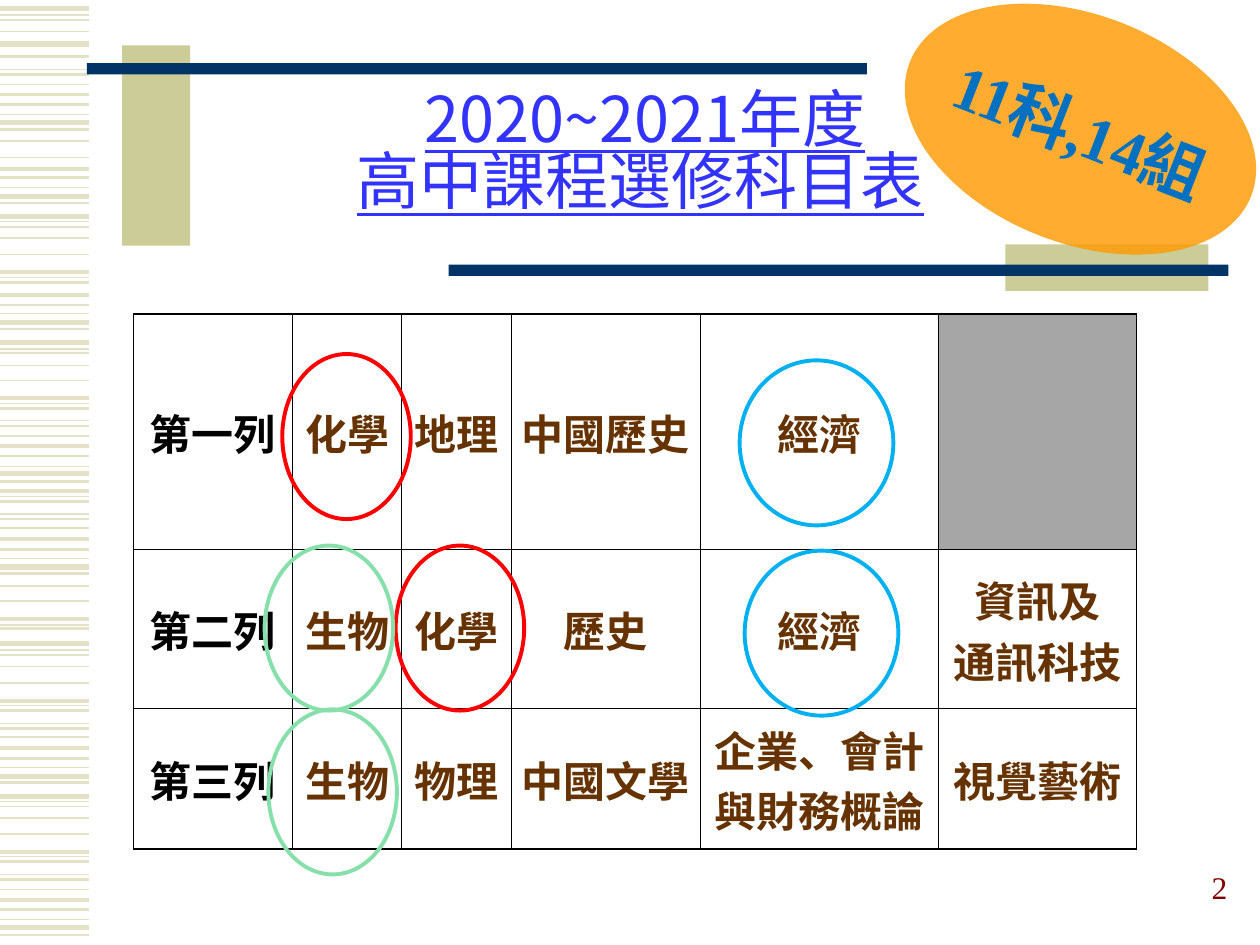
from lxml import etree
from pptx import Presentation
from pptx import util as u
from pptx.dml.color import RGBColor
from pptx.enum import shapes, text
from pptx.oxml.ns import qn

PX = 9144  # 100 px to the inch
CJK, SERIF = "Noto Sans CJK TC", "Times New Roman"
NAVY, TAN, BROWN, BLACK = "003366", "CCCC99", "663300", "000000"
RED, GREEN, BLUE = "FF0000", "87DFAB", "00B0F0"

# Line width in points -> heights of the stripes in the left margin
STRIPES = {
    0.75: [12, 55, 91, 149, 176, 220, 249, 277, 320, 334, 370, 394, 408, 443, 496,
           516, 560, 574, 609, 636, 680, 694, 730],
    1: [16, 25, 67, 112, 125, 180, 189, 202, 280, 290, 302, 346, 419, 465, 477,
        520, 529, 542, 585, 640, 649, 662, 706],
    1.5: [45, 59, 83, 103, 141, 161, 224, 242, 261, 324, 338, 362, 382, 398, 412,
          436, 455, 499, 564, 578, 602, 621, 684, 698, 722, 742],
    2.25: [75, 134, 216, 234, 316, 354, 390, 428, 491, 556, 594, 676, 714],
    3: [7, 35, 97, 156, 172, 256, 272, 376, 450, 511, 616, 632, 736],
}
COLS, ROWS = [126, 87, 87, 150, 189, 157], [187, 126, 112]
SUBJECTS = [
    ["第一列", "化學", "地理", "中國歷史", "經濟", ""],
    ["第二列", "生物", "化學", "歷史", "經濟", "資訊及\v通訊科技"],
    ["第三列", "生物", "物理", "中國文學", "企業、會計\v與財務概論", "視覺藝術"],
]
# Rings round the repeated subjects: left, top, width, colour
RINGS = [(224, 281, 102, RED), (314, 433, 102, RED), (210, 433, 102, GREEN),
         (213, 563, 102, GREEN), (591, 437, 122, BLUE), (587, 286, 122, BLUE)]


def px(*values):
    return [u.Emu(v * PX) for v in values]


def rgb(hex_color):
    return RGBColor.from_string(hex_color)


def style(font, size, color, name=CJK, bold=False):
    font.size, font.name, font.bold = u.Pt(size), name, bold
    font.color.rgb = rgb(color)
    etree.SubElement(font._element, qn("a:ea"), typeface=CJK)


def add_shape(s, kind, box, fill=None, line=None):
    sp = s.shapes.add_shape(kind, *px(*box))
    sp.shadow.inherit = False
    if fill:
        sp.fill.solid()
        sp.fill.fore_color.rgb = rgb(fill)
    else:
        sp.fill.background()
    if line:
        sp.line.color.rgb, sp.line.width = rgb(line), u.Pt(2.25)
    else:
        sp.line.fill.background()
    return sp


def add_stripes(s, x, y, w):
    for weight, heights in STRIPES.items():
        for h in heights:
            c = s.shapes.add_connector(shapes.MSO_CONNECTOR.STRAIGHT,
                                       *px(x, y + h, x + w, y + h))
            c.line.color.rgb, c.line.width = rgb("E3E2C7"), u.Pt(weight)
            etree.SubElement(c._element.spPr, qn("a:effectLst"))


def add_bars(s, x, y):
    for dx, dy, w, h, fill in [(28, 0, 54, 159, TAN), (0, 14, 619, 9, NAVY),
                               (729, 158, 161, 37, TAN), (287, 174, 619, 9, NAVY)]:
        add_shape(s, shapes.MSO_SHAPE.RECTANGLE, (x + dx, y + dy, w, h), fill)


def add_title(s, box):
    sp = s.shapes.title
    sp.left, sp.top, sp.width, sp.height = px(*box)
    tf = sp.text_frame
    tf.text = "2020~2021年度\n高中課程選修科目表"
    tf.word_wrap, tf.auto_size = True, text.MSO_AUTO_SIZE.NONE
    tf.vertical_anchor = text.MSO_ANCHOR.TOP
    for p in tf.paragraphs:
        p.alignment, p.line_spacing = text.PP_ALIGN.CENTER, 0.83
        style(p.runs[0].font, 36, "3333FF")
        p.runs[0].font.underline = True
    r = tf.paragraphs[1].add_run()
    r.text = " "
    style(r.font, 24, NAVY, SERIF)


def add_badge(s, box):
    sp = add_shape(s, shapes.MSO_SHAPE.OVAL, box, "FF9900")
    sp.rotation = 21.4
    color = sp._element.spPr.find(".//" + qn("a:srgbClr"))
    etree.SubElement(color, qn("a:alpha"), val="81000")
    tf = sp.text_frame
    tf.text = "11科,14組"
    tf.word_wrap, tf.vertical_anchor = False, text.MSO_ANCHOR.MIDDLE
    p = tf.paragraphs[0]
    p.alignment = text.PP_ALIGN.CENTER
    style(p.runs[0].font, 36, "0070C0", SERIF, True)


def set_borders(cell, widths):
    """Widths are in points, in the order left, right, top, bottom."""
    tcPr = cell._tc.get_or_add_tcPr()
    for i, (side, width) in enumerate(zip("LRTB", widths)):
        ln = etree.Element(qn("a:ln" + side), w=str(u.Pt(width)))
        fill = etree.SubElement(ln, qn("a:solidFill"))
        etree.SubElement(fill, qn("a:srgbClr"), val=BLACK)
        tcPr.insert(i, ln)


def add_subjects(s, x, y):
    table = s.shapes.add_table(len(ROWS), len(COLS),
                               *px(x, y, sum(COLS), sum(ROWS))).table
    table.first_row = table.horz_banding = False
    for col, w in zip(table.columns, COLS):
        col.width = u.Emu(w * PX)
    for i, (row, h) in enumerate(zip(table.rows, ROWS)):
        row.height = u.Emu(h * PX)
        for j, (cell, label) in enumerate(zip(row.cells, SUBJECTS[i])):
            if label:
                cell.fill.background()
            else:
                cell.fill.solid()
                cell.fill.fore_color.rgb = rgb("A6A6A6")
            cell.margin_left = cell.margin_right = cell.margin_top = u.Emu(PX)
            cell.margin_bottom = 0
            cell.vertical_anchor = text.MSO_ANCHOR.MIDDLE
            set_borders(cell, (0.5 if j else 1, 0.5, 0.5 if i else 1,
                               1 if i == len(ROWS) - 1 else 0.5))
            p = cell.text_frame.paragraphs[0]
            p.text, p.alignment = label, text.PP_ALIGN.CENTER
            for r in p.runs:
                style(r.font, 24, BROWN if j else BLACK, bold=True)


def add_rings(s):
    for x, y, w, color in RINGS:
        add_shape(s, shapes.MSO_SHAPE.OVAL, (x, y, w, 131), line=color)


def add_page_number(s, box):
    tf = s.shapes.add_textbox(*px(*box)).text_frame
    tf.word_wrap, tf.vertical_anchor = True, text.MSO_ANCHOR.BOTTOM
    p = tf.paragraphs[0]
    p.text, p.alignment = "2", text.PP_ALIGN.RIGHT
    style(p.runs[0].font, 18, "800000", SERIF)


def main():
    prs = Presentation()
    prs.slide_width, prs.slide_height = px(1000, 750)
    s = prs.slides.add_slide(prs.slide_layouts[5])
    # Background decoration
    add_stripes(s, 0, 0, 71)
    add_bars(s, 69, 36)
    # Heading
    add_title(s, (83, 68, 858, 131))
    add_page_number(s, (744, 674, 240, 50))
    add_badge(s, (712, 12, 291, 181))
    # Subject table and its rings
    add_subjects(s, 106, 249)
    add_rings(s)
    prs.save("out.pptx")


if __name__ == "__main__":
    main()
